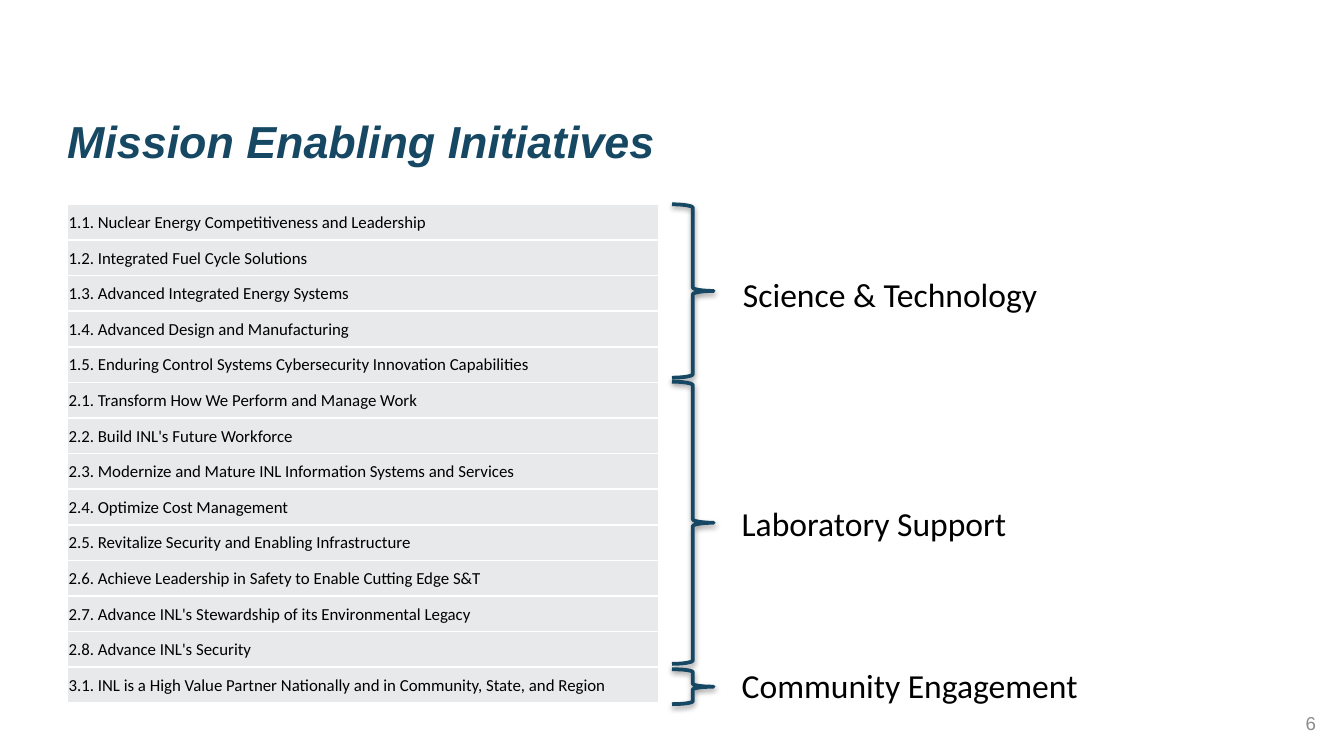
"""Build the Mission Enabling Initiatives slide."""
from lxml import etree
from pptx import Presentation, util as u
from pptx.dml.color import RGBColor
from pptx.enum import shapes, text
from pptx.oxml import ns

NAVY = RGBColor(0x16, 0x48, 0x63)
GREY = RGBColor(0x8C, 0x8C, 0x8C)
PALE = RGBColor(0xE8, 0xE9, 0xEA)
BLACK = RGBColor(0, 0, 0)
MAIN = "http://schemas.openxmlformats.org/drawingml/2006/main"
SHADE = f"""<a:effectLst xmlns:a="{MAIN}">
<a:outerShdw blurRad="39370" dist="20320" dir="5400000" rotWithShape="0">
<a:srgbClr val="000000"><a:alpha val="38000"/></a:srgbClr></a:outerShdw></a:effectLst>"""
EDGE = f"""<a:{{0}} xmlns:a="{MAIN}" w="12700"><a:solidFill>
<a:srgbClr val="FFFFFF"/></a:solidFill></a:{{0}}>"""

ITEMS = [
    "1.1. Nuclear Energy Competitiveness and Leadership",
    "1.2. Integrated Fuel Cycle Solutions",
    "1.3. Advanced Integrated Energy Systems",
    "1.4. Advanced Design and Manufacturing",
    "1.5. Enduring Control Systems Cybersecurity Innovation Capabilities",
    "2.1. Transform How We Perform and Manage Work",
    "2.2. Build INL's Future Workforce",
    "2.3. Modernize and Mature INL Information Systems and Services",
    "2.4. Optimize Cost Management",
    "2.5. Revitalize Security and Enabling Infrastructure",
    "2.6. Achieve Leadership in Safety to Enable Cutting Edge S&T",
    "2.7. Advance INL's Stewardship of its Environmental Legacy",
    "2.8. Advance INL's Security",
    "3.1. INL is a High Value Partner Nationally and in Community, State, and Region",
]
GROUPS = [
    ("Science & Technology", (5.43, 1.99, 2.43, 0.4), 1.52, 1.29),
    ("Laboratory Support", (5.42, 3.69, 2.43, 0.4), 2.84, 2.1),
    ("Community Engagement", (5.42, 4.9, 2.99, 0.4), 4.98, 0.26),
]


def style(para, size, face, tint):
    font = para.font
    font.size, font.name = u.Pt(size), face
    font.color.rgb = tint


def label(words, place):
    box = slide.shapes.add_textbox(*map(u.Inches, place))
    box.text_frame.text = words
    box.text_frame.word_wrap = True
    return box.text_frame


deck = Presentation()
deck.slide_width = u.Inches(10)
deck.slide_height = deck.slide_width * 9 // 16
slide = deck.slides.add_slide(deck.slide_layouts[5])

title = slide.shapes.title
title.left, title.top = u.Inches(0.5), u.Inches(0.61)
title.width, title.height = u.Inches(9), u.Inches(0.94)
frame = title.text_frame
frame.text = "Mission Enabling Initiatives"
frame.margin_left = 0
frame.vertical_anchor = text.MSO_ANCHOR.MIDDLE
para = frame.paragraphs[0]
para.alignment, para.line_spacing = text.PP_ALIGN.LEFT, 0.85
style(para, 24, "Arial", NAVY)
para.font.bold = para.font.italic = True

frame = label("6", (7.56, 5.23, 2.33, 0.3))
frame.vertical_anchor = text.MSO_ANCHOR.MIDDLE
frame.paragraphs[0].alignment = text.PP_ALIGN.RIGHT
style(frame.paragraphs[0], 10, "Arial", GREY)

table = slide.shapes.add_table(
    len(ITEMS), 1, u.Inches(0.5), u.Inches(1.52), u.Inches(4.4), u.Inches(3.71)).table
table.first_row = table.horz_banding = False
for row, item in zip(table.rows, ITEMS):
    cell = row.cells[0]
    cell.text = item
    cell.margin_left = cell.margin_right = cell.margin_top = u.Inches(0.01)
    cell.margin_bottom = 0
    cell.vertical_anchor = text.MSO_ANCHOR.MIDDLE
    style(cell.text_frame.paragraphs[0], 9, "Calibri", BLACK)
    props = cell._tc.get_or_add_tcPr()
    for side in ("lnL", "lnR", "lnT", "lnB"):
        props.append(etree.fromstring(EDGE.format(side)))
    cell.fill.solid()
    cell.fill.fore_color.rgb = PALE

for name, place, top, height in GROUPS:
    brace = slide.shapes.add_shape(
        shapes.MSO_SHAPE.RIGHT_BRACE, *map(u.Inches, (5, top, 0.31, height)))
    brace.fill.background()
    brace.line.color.rgb, brace.line.width = NAVY, u.Pt(2)
    brace.shadow.inherit = False
    old = brace._element.spPr.find(ns.qn("a:effectLst"))
    old.getparent().replace(old, etree.fromstring(SHADE))
    style(label(name, place).paragraphs[0], 18, "Calibri", BLACK)

deck.save("out.pptx")
